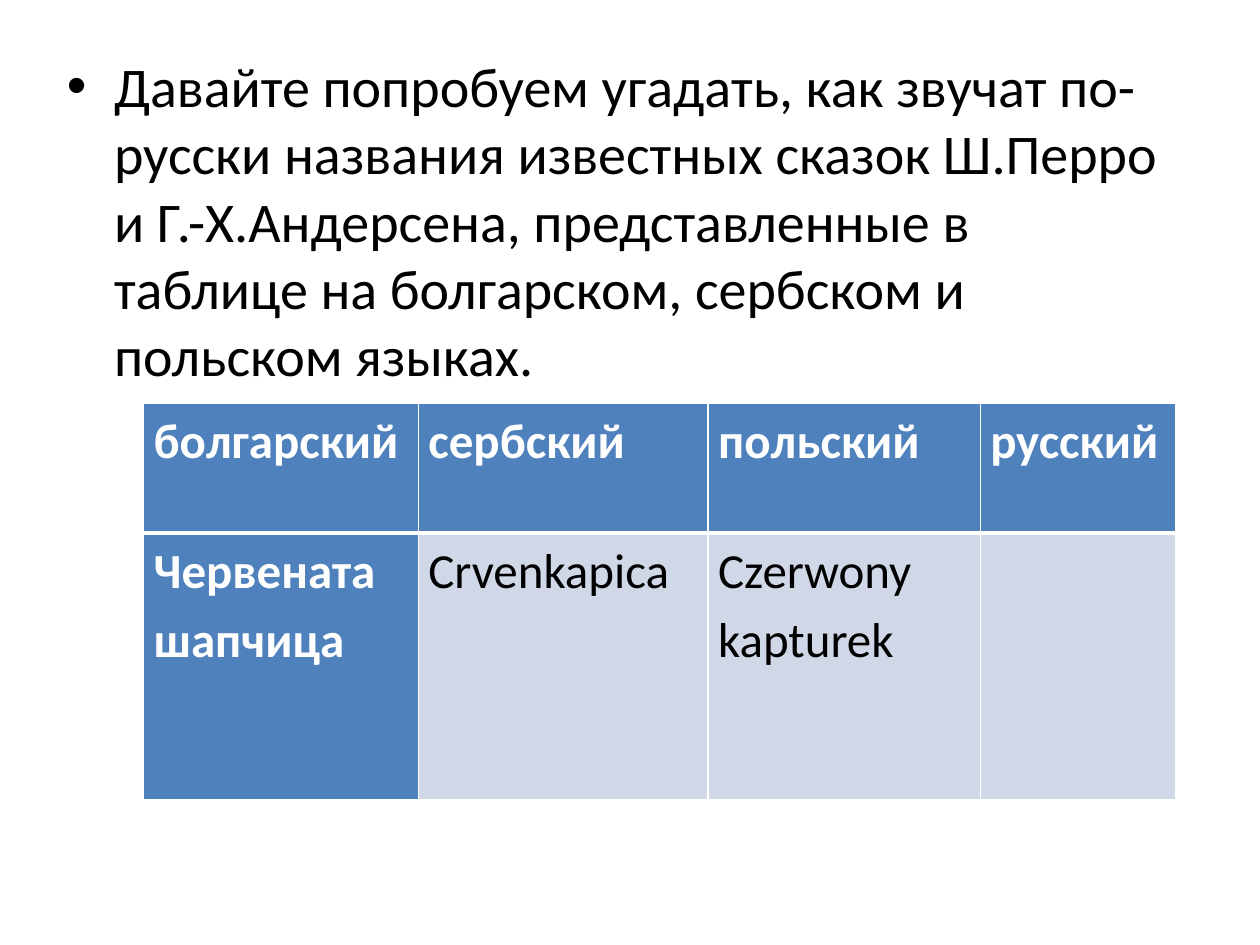
from lxml.etree import SubElement
from pptx import Presentation
from pptx.dml.color import RGBColor
from pptx.oxml.ns import qn
from pptx.util import Inches, Pt

COLORS = {"text": "000000", "white": "FFFFFF", "header": "4F81BD", "band": "D0D8E8"}
FONT = "Calibri"
TASK = (
    "Давайте попробуем угадать, как звучат по-русски названия известных сказок "
    "Ш.Перро и Г.-Х.Андерсена, представленные в таблице на болгарском, "
    "сербском и польском языках."
)
ROWS = [
    ["болгарский", "сербский", "польский", "русский"],
    ["Червената шапчица", "Crvenkapica", "Czerwony kapturek", ""],
]
COLUMN_WIDTHS = [2.18, 2.3, 2.16, 1.55]
ROW_HEIGHTS = [1.03, 2.12]


def write_text(frame, text, size, color, bold=False, line_spacing=None, space_after=None):
    paragraph = frame.paragraphs[0]
    paragraph.line_spacing = line_spacing
    if space_after is not None:
        paragraph.space_after = Pt(space_after)
    paragraph.font.size = Pt(size)
    if text:
        run = paragraph.add_run()
        run.text = text
        run.font.name = FONT
        run.font.size = Pt(size)
        run.font.bold = bold
        run.font.color.rgb = RGBColor.from_string(COLORS[color])


def draw_borders(cell, widths):
    properties = cell._tc.get_or_add_tcPr()
    for side, width in widths.items():
        line = SubElement(properties, qn(f"a:ln{side}"), w=str(Pt(width)))
        fill = SubElement(line, qn("a:solidFill"))
        SubElement(fill, qn("a:srgbClr"), val=COLORS["white"])


def add_language_table(slide):
    frame = slide.shapes.add_table(
        len(ROWS), len(COLUMN_WIDTHS), Inches(1.14), Inches(3.2),
        Inches(sum(COLUMN_WIDTHS)), Inches(sum(ROW_HEIGHTS)),
    )
    table = frame.table
    table.first_col = True
    for column, width in zip(table.columns, COLUMN_WIDTHS):
        column.width = Inches(width)
    for row, height in zip(table.rows, ROW_HEIGHTS):
        row.height = Inches(height)
    for row_index, texts in enumerate(ROWS):
        for column_index, text in enumerate(texts):
            cell = table.cell(row_index, column_index)
            heading = row_index == 0 or column_index == 0
            cell.margin_left = cell.margin_right = Inches(0.08)
            cell.margin_top = cell.margin_bottom = 0
            top, bottom = (1, 3) if row_index == 0 else (3, 1)
            draw_borders(cell, {"L": 1, "R": 1, "T": top, "B": bottom})
            cell.fill.solid()
            cell.fill.fore_color.rgb = RGBColor.from_string(
                COLORS["header" if heading else "band"])
            write_text(cell.text_frame, text, 28, "white" if heading else "text",
                       bold=heading, line_spacing=1.15, space_after=7.5)


def main():
    """Build the slide with the fairy-tale title guessing task."""
    presentation = Presentation()
    presentation.slide_width, presentation.slide_height = Inches(10), Inches(7.5)
    slide = presentation.slides.add_slide(presentation.slide_layouts[1])
    title = slide.shapes.title.element
    title.getparent().remove(title)
    body = slide.placeholders[1]
    body.left, body.top = Inches(0.43), Inches(0.36)
    body.width, body.height = Inches(9), Inches(4.95)
    write_text(body.text_frame, TASK, 32, "text")
    add_language_table(slide)
    presentation.save("out.pptx")


if __name__ == "__main__":
    main()
